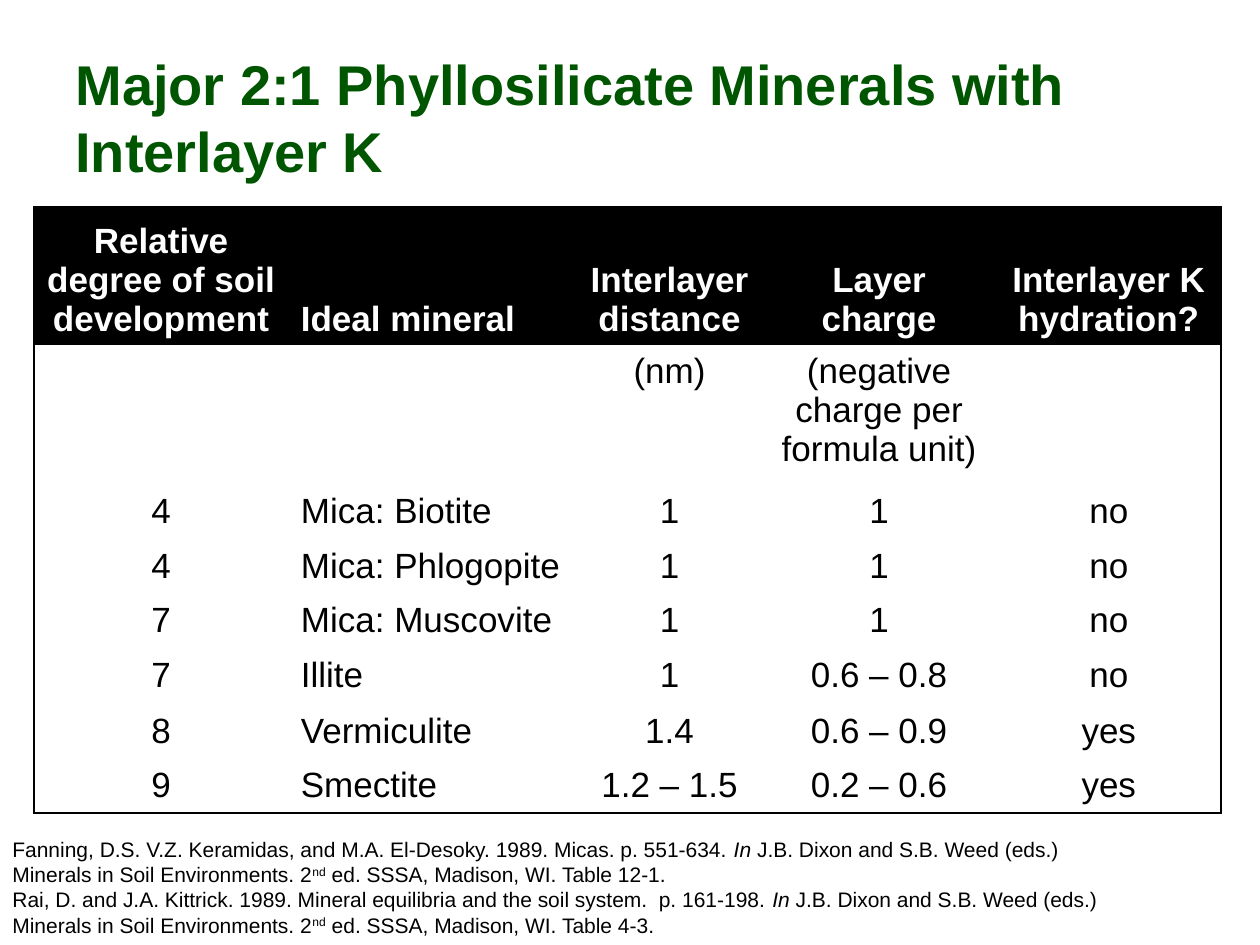
from lxml import etree
from pptx import Presentation
from pptx.dml.color import RGBColor
from pptx.enum.text import MSO_ANCHOR, PP_ALIGN
from pptx.oxml.ns import qn
from pptx.util import Inches, Pt

LEFT, CENTER = PP_ALIGN.LEFT, PP_ALIGN.CENTER
TOP, MIDDLE, BOTTOM = MSO_ANCHOR.TOP, MSO_ANCHOR.MIDDLE, MSO_ANCHOR.BOTTOM

FONT = "Arial"
COLORS = {"title": "005500", "ink": "000000", "paper": "FFFFFF"}

COLUMN_WIDTHS = [2.02, 2.3, 1.46, 1.87, 1.78]
ROW_HEIGHTS = [1.03, 1.03, 0.41, 0.41, 0.41, 0.44, 0.42, 0.42]
MINERALS = [
    ["Relative degree of soil development", "Ideal mineral", "Interlayer distance",
     "Layer charge", "Interlayer K hydration?"],
    ["", "", "(nm)", "(negative charge per formula unit)", ""],
    ["4", "Mica: Biotite", "1", "1", "no"],
    ["4", "Mica: Phlogopite", "1", "1", "no"],
    ["7", "Mica: Muscovite", "1", "1", "no"],
    ["7", "Illite", "1", "0.6 – 0.8", "no"],
    ["8", "Vermiculite", "1.4", "0.6 – 0.9", "yes"],
    ["9", "Smectite", "1.2 – 1.5", "0.2 – 0.6", "yes"],
]
REFERENCES = [
    ("Fanning, D.S. V.Z. Keramidas, and M.A. El-Desoky. 1989. Micas. p. 551-634. ",
     "Table 12-1."),
    ("Rai, D. and J.A. Kittrick. 1989. Mineral equilibria and the soil system.  p. 161-198. ",
     "Table 4-3."),
]


def style_font(font, size, color, bold=False):
    font.name = FONT
    font.size = Pt(size)
    font.bold = bold
    font.color.rgb = RGBColor.from_string(COLORS[color])


def add_title(slide, left, top, width, height):
    frame = slide.shapes.add_textbox(left, top, width, height).text_frame
    frame.word_wrap = True
    frame.vertical_anchor = MIDDLE
    frame.text = "Major 2:1 Phyllosilicate Minerals with Interlayer K"
    style_font(frame.paragraphs[0].runs[0].font, 32, "title", bold=True)


def set_borders(cell, outer_sides):
    properties = cell._tc.get_or_add_tcPr()
    for side in "LRTB":
        line = etree.SubElement(properties, qn(f"a:ln{side}"), w=str(Pt(1)))
        if side in outer_sides:
            fill = etree.SubElement(line, qn("a:solidFill"))
            etree.SubElement(fill, qn("a:srgbClr"), val=COLORS["ink"])
        else:
            etree.SubElement(line, qn("a:noFill"))


def fill_cell(cell, text, row, column):
    last_row, last_column = len(ROW_HEIGHTS) - 1, len(COLUMN_WIDTHS) - 1
    edges = {"L": column == 0, "R": column == last_column,
             "T": row == 0, "B": row == last_row}
    set_borders(cell, [side for side, is_outer in edges.items() if is_outer])
    is_header = row == 0
    cell.fill.solid()
    cell.fill.fore_color.rgb = RGBColor.from_string(COLORS["ink" if is_header else "paper"])
    cell.vertical_anchor = {0: BOTTOM, 1: TOP}.get(row, MIDDLE)
    cell.text_frame.text = text
    paragraph = cell.text_frame.paragraphs[0]
    paragraph.alignment = LEFT if column == 1 else CENTER
    for run in paragraph.runs:
        style_font(run.font, 20, "paper" if is_header else "ink", bold=is_header)


def add_mineral_table(slide, left, top, width, height):
    table = slide.shapes.add_table(
        len(ROW_HEIGHTS), len(COLUMN_WIDTHS), left, top, width, height).table
    table.horz_banding = False
    for column, share in zip(table.columns, COLUMN_WIDTHS):
        column.width = int(width * share / sum(COLUMN_WIDTHS))
    for row, share in zip(table.rows, ROW_HEIGHTS):
        row.height = int(height * share / sum(ROW_HEIGHTS))
    for row, texts in enumerate(MINERALS):
        for column, text in enumerate(texts):
            fill_cell(table.cell(row, column), text, row, column)


def add_run(paragraph, text):
    run = paragraph.add_run()
    run.text = text
    style_font(run.font, 12, "ink")
    return run


def add_references(slide, left, top, width, height):
    frame = slide.shapes.add_textbox(left, top, width, height).text_frame
    frame.word_wrap = False
    for index, (citation, table_number) in enumerate(REFERENCES):
        paragraph = frame.add_paragraph() if index else frame.paragraphs[0]
        add_run(paragraph, citation)
        add_run(paragraph, "In").font.italic = True
        add_run(paragraph, " J.B. Dixon and S.B. Weed (eds.)")
        paragraph.add_line_break()
        add_run(paragraph, "Minerals in Soil Environments. 2")
        ordinal = add_run(paragraph, "nd")
        ordinal.font._element.set("baseline", "30000")
        add_run(paragraph, f" ed. SSSA, Madison, WI. {table_number}")


def main():
    presentation = Presentation()
    presentation.slide_width = Inches(10)
    presentation.slide_height = Inches(7.5)
    slide = presentation.slides.add_slide(presentation.slide_layouts[6])
    add_title(slide, Inches(0.5), Inches(0.3), Inches(9), Inches(1.25))
    add_mineral_table(slide, Inches(0.27), Inches(1.64), Inches(9.42), Inches(4.57))
    add_references(slide, Inches(0), Inches(6.59), Inches(8.88), Inches(0.91))
    presentation.save("out.pptx")


if __name__ == "__main__":
    main()
